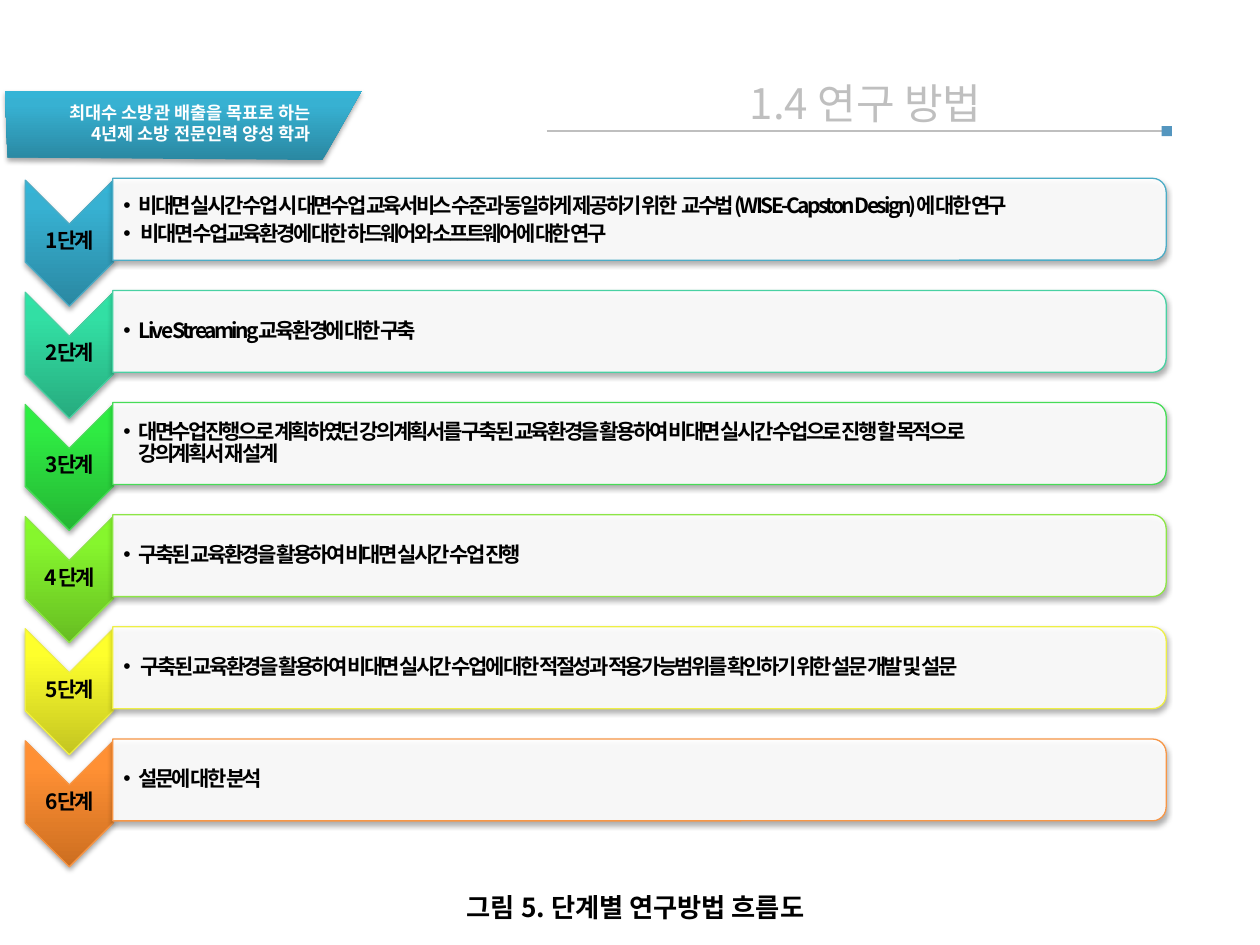
from copy import deepcopy
from lxml import etree
from pptx import Presentation
from pptx.dml.color import RGBColor
from pptx.enum.shapes import MSO_CONNECTOR, MSO_SHAPE
from pptx.enum.text import MSO_ANCHOR, PP_ALIGN
from pptx.oxml import parse_xml
from pptx.oxml.ns import qn
from pptx.util import Inches, Pt

FONT = "Noto Sans CJK KR"
COLORS = {"white": "FFFFFF", "black": "000000", "gray": "BFBFBF", "marker": "5496BF"}
BANNER_GRADIENT = ["2A88A2", "37B1D2", "34B4D6"]
SHADOW = (
    '<a:outerShdw xmlns:a="http://schemas.openxmlformats.org/drawingml/2006/main" '
    'blurRad="39370" dist="22860" dir="5400000" rotWithShape="0">'
    '<a:srgbClr val="000000"><a:alpha val="35000"/></a:srgbClr></a:outerShdw>'
)

# Outline colour, gradient from bottom to top, label, bullet lines, line spacing
STEPS = [
    ("4BACC6", BANNER_GRADIENT, "1단계",
     ["비대면 실시간 수업 시 대면수업 교육서비스 수준과 동일하게 제공하기 위한   교수법(WISE-Capston Design)에 대한 연구",
      " 비대면 수업교육환경에 대한 하드웨어와 소프트웨어에 대한 연구"], 1.0),
    ("49D1A3", ["27AB7E", "32DFA4", "2FE3A6"], "2단계",
     ["Live Streaming교육환경에 대한 구축"], 0.9),
    ("47DC57", ["24B534", "2FEB43", "2CEF41"], "3단계",
     ["대면수업진행으로 계획하였던 강의계획서를 구축된 교육환경을 활용하여 비대면 실시간 수업으로 진행 할 목적으로\v강의계획서 재 설계"], 0.9),
    ("8DE646", ["67BD22", "86F62D", "86FB29"], "4 단계",
     ["구축된 교육환경을 활용하여 비대면 실시간 수업 진행"], 0.9),
    ("EEEF46", ["C4C521", "FEFF2C", "FEFF2D"], "5단계",
     [" 구축된 교육환경을 활용하여 비대면 실시간 수업에 대한 적절성과 적용가능범위를 확인하기 위한 설문 개발 및 설문"], 0.9),
    ("F79646", ["CC6E20", "FF9034", "FF9136"], "6단계",
     ["설문에 대한 분석"], 0.9),
]


def write_text(shape, lines, size, color, align, bold=True, spacing=None,
               tracking=None, after=None):
    """Fill the shape with one formatted paragraph per line."""
    frame = shape.text_frame
    frame.word_wrap = True
    frame.text = "\n".join(lines)
    for paragraph in frame.paragraphs:
        paragraph.alignment = align
        paragraph.line_spacing = spacing
        if after is not None:
            paragraph.space_after = Pt(after)
        for run in paragraph.runs:
            run.font.size = Pt(size)
            run.font.bold = bold
            run.font.name = FONT
            run.font.color.rgb = RGBColor.from_string(COLORS[color])
            properties = run.font._element
            east_asian = etree.SubElement(properties, qn("a:ea"))
            east_asian.set("typeface", FONT)
            if tracking is not None:
                properties.set("spc", str(int(tracking * 100)))
    return frame


def style_shape(shape, outline=None, gradient=None):
    """Apply outline, soft shadow and an upward gradient."""
    shape.shadow.inherit = False
    properties = shape._element.spPr
    properties.find(qn("a:effectLst")).append(parse_xml(SHADOW))
    if outline:
        shape.line.color.rgb = RGBColor.from_string(outline)
        shape.line.width = Pt(0.75)
    else:
        shape.line.fill.background()
    if gradient:
        shape.fill.gradient()
        shape.fill.gradient_angle = 90
        properties.find(qn("a:gradFill")).set("rotWithShape", "0")
        stop_list = properties.find(qn("a:gradFill")).find(qn("a:gsLst"))
        stop_list.append(deepcopy(stop_list[-1]))
        for stop, position, color in zip(shape.fill.gradient_stops, (0, 0.8, 1), gradient):
            stop.position = position
            stop.color.rgb = RGBColor.from_string(color)


presentation = Presentation()
presentation.slide_width = Inches(10)
presentation.slide_height = Inches(7.5)
slide = presentation.slides.add_slide(presentation.slide_layouts[6])
shapes = slide.shapes

# Title with rule and end marker
title = shapes.add_textbox(Inches(4.34), Inches(0.57), Inches(5.06), Inches(0.5))
write_text(title, ["1.4 연구 방법"], 24, "gray", PP_ALIGN.CENTER, bold=False)

rule = shapes.add_connector(MSO_CONNECTOR.STRAIGHT, Inches(4.34), Inches(1.04),
                            Inches(9.25), Inches(1.04))
rule.line.color.rgb = RGBColor.from_string(COLORS["gray"])
rule.line.width = Pt(0.75)
etree.SubElement(rule._element.spPr, qn("a:effectLst"))

marker = shapes.add_shape(MSO_SHAPE.RECTANGLE, Inches(9.22), Inches(1),
                          Inches(0.08), Inches(0.08))
marker.shadow.inherit = False
marker.fill.solid()
marker.fill.fore_color.rgb = RGBColor.from_string(COLORS["marker"])
marker.line.fill.background()

# Slanted banner
corners = [(0.06, 1.25), (0.04, 0.72), (2.87, 0.72), (2.56, 1.27)]
points = [(Inches(x), Inches(y)) for x, y in corners]
builder = shapes.build_freeform(*points[0])
builder.add_line_segments(points[1:], close=True)
style_shape(builder.convert_to_shape(), gradient=BANNER_GRADIENT)

banner_text = shapes.add_textbox(Inches(-0.04), Inches(0.76), Inches(2.6), Inches(0.44))
write_text(banner_text, ["최대수 소방관 배출을 목표로 하는", "4년제 소방 전문인력 양성 학과"],
           10, "white", PP_ALIGN.RIGHT)

# Six steps: chevron, label, panel, bullets
for index, (outline, gradient, label, bullets, spacing) in enumerate(STEPS):
    offset = index * 0.89

    chevron = shapes.add_shape(MSO_SHAPE.CHEVRON, Inches(0.05), Inches(1.58 + offset),
                               Inches(1), Inches(0.7))
    chevron.rotation = 90
    style_shape(chevron, outline, gradient)

    label_box = shapes.add_textbox(Inches(0.2), Inches(1.77 + offset),
                                   Inches(0.7), Inches(0.3))
    label_frame = write_text(label_box, [label], 12, "black", PP_ALIGN.CENTER,
                             spacing=0.9, tracking=-1.5, after=4.2)

    panel = shapes.add_shape(MSO_SHAPE.ROUND_2_SAME_RECTANGLE, Inches(4.75),
                             Inches(-2.44 + offset), Inches(0.65), Inches(8.36))
    panel.rotation = 90
    panel.fill.solid()
    panel.fill.fore_color.rgb = RGBColor.from_string(COLORS["white"])
    style_shape(panel, outline)
    panel_color = panel._element.spPr.find(qn("a:solidFill"))[0]
    etree.SubElement(panel_color, qn("a:alpha")).set("val", "90000")

    bullet_box = shapes.add_textbox(Inches(0.89), Inches(1.45 + offset),
                                    Inches(8.33), Inches(0.58))
    bullet_frame = write_text(bullet_box, bullets, 12, "black", PP_ALIGN.LEFT,
                              spacing=spacing, tracking=-1.5, after=1.8)
    for paragraph in bullet_frame.paragraphs:
        paragraph.level = 1
        properties = paragraph._p.get_or_add_pPr()
        properties.set("marL", str(Inches(0.12)))
        properties.set("indent", str(Inches(-0.12)))
        etree.SubElement(properties, qn("a:buFont")).set("typeface", "Arial")
        etree.SubElement(properties, qn("a:buChar")).set("char", "•")

    for frame, left_margin in ((label_frame, 0.01), (bullet_frame, 0.09)):
        frame.vertical_anchor = MSO_ANCHOR.MIDDLE
        frame.margin_left = Inches(left_margin)
        frame.margin_top = frame.margin_right = frame.margin_bottom = Inches(0.01)

# Caption with shadowed text
caption = shapes.add_shape(MSO_SHAPE.ROUNDED_RECTANGLE, Inches(0.2), Inches(6.98),
                           Inches(9.69), Inches(0.31))
caption.adjustments[0] = 0.16
caption.shadow.inherit = False
caption.fill.background()
caption.line.fill.background()
caption_frame = write_text(caption, ["그림 5. 단계별 연구방법 흐름도"], 15, "black",
                           PP_ALIGN.CENTER, spacing=1.5)
caption_frame.vertical_anchor = MSO_ANCHOR.MIDDLE
caption_font = caption_frame.paragraphs[0].runs[0].font._element
text_effects = etree.Element(qn("a:effectLst"))
text_effects.append(parse_xml(SHADOW))
caption_font.find(qn("a:solidFill")).addnext(text_effects)

presentation.save("out.pptx")
